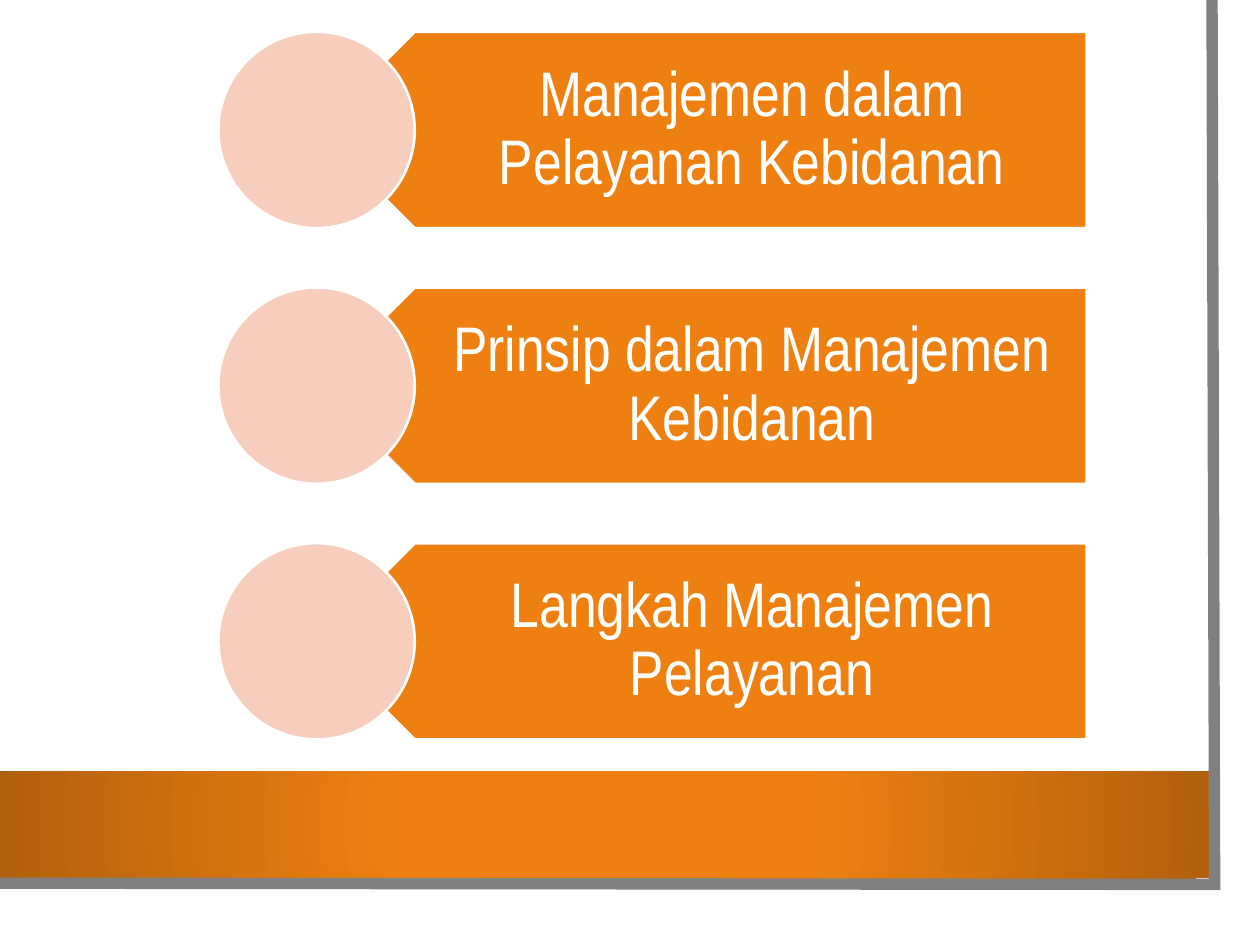
import pptx
import pptx.util
import pptx.dml.color
import pptx.enum.shapes
import pptx.enum.text
import pptx.oxml
import pptx.oxml.ns

Pt = pptx.util.Pt
RGBColor = pptx.dml.color.RGBColor
SHAPE = pptx.enum.shapes.MSO_SHAPE

WHITE = RGBColor(0xFF, 0xFF, 0xFF)
ORANGE = RGBColor(0xEE, 0x80, 0x11)
DARK_ORANGE = RGBColor(0xB2, 0x60, 0x0D)
PEACH = RGBColor(0xF7, 0xCD, 0xBD)
GREY = RGBColor(0x80, 0x80, 0x80)
NS = pptx.oxml.ns.nsdecls("a")

TOPICS = [
    "Manajemen dalam Pelayanan Kebidanan",
    "Prinsip dalam Manajemen Kebidanan",
    "Langkah Manajemen Pelayanan",
]
FIRST_TOP = 18.2
ROW_STEP = 146.1
ROW_HEIGHT = 112.2

presentation = pptx.Presentation()
presentation.slide_width = Pt(720)
presentation.slide_height = Pt(540)
slide = presentation.slides.add_slide(presentation.slide_layouts[6])


def add_block(kind, left, top, width, height, fill, line=None):
    block = slide.shapes.add_shape(kind, Pt(left), Pt(top), Pt(width), Pt(height))
    block.shadow.inherit = False
    block.fill.solid()
    block.fill.fore_color.rgb = fill
    if line is None:
        block.line.fill.background()
    else:
        block.line.color.rgb = line
        block.line.width = Pt(1.5)
    return block


def add_label(text, *, left, top, width, height, size, font, color):
    label = slide.shapes.add_textbox(Pt(left), Pt(top), Pt(width), Pt(height))
    frame = label.text_frame
    frame.word_wrap = True
    frame.vertical_anchor = pptx.enum.text.MSO_ANCHOR.MIDDLE
    frame.margin_left, frame.margin_right = Pt(49.5), Pt(20.2)
    frame.margin_top = frame.margin_bottom = Pt(10.8)
    paragraph = frame.paragraphs[0]
    paragraph.text = text
    paragraph.alignment = pptx.enum.text.PP_ALIGN.CENTER
    paragraph.line_spacing = 0.9
    paragraph.font.size = Pt(size)
    paragraph.font.name = font
    paragraph.font.color.rgb = color


add_block(SHAPE.RECTANGLE, 0, 0, 707.8, 523.4, WHITE)

footer_band = add_block(SHAPE.RECTANGLE, 0, 440.6, 691.2, 61.2, ORANGE)
footer_band.fill.gradient()
for stop, position, color in zip(
    footer_band.fill.gradient_stops, (0.34, 1), (ORANGE, DARK_ORANGE)
):
    stop.position = position
    stop.color.rgb = color
linear = footer_band.fill._xPr.find(".//" + pptx.oxml.ns.qn("a:lin"))
radial = pptx.oxml.parse_xml(
    f'<a:path {NS} path="circle">'
    '<a:fillToRect l="50000" t="50000" r="50000" b="50000"/></a:path>'
)
linear.getparent().replace(linear, radial)

edge_builder = slide.shapes.build_freeform(Pt(692.6), Pt(0))
edge_builder.add_line_segments(
    [(Pt(694.1), Pt(505.4)), (Pt(-1.4), Pt(504.7))], close=False
)
page_edge = edge_builder.convert_to_shape()
page_edge.shadow.inherit = False
page_edge.fill.background()
page_edge.line.color.rgb = GREY
page_edge.line.width = Pt(6.5)
page_edge.line._ln.append(pptx.oxml.parse_xml(f'<a:miter {NS} lim="800000"/>'))

for row, topic in enumerate(TOPICS):
    top = FIRST_TOP + row * ROW_STEP
    banner = add_block(SHAPE.PENTAGON, 180.9, top, 440, ROW_HEIGHT, ORANGE, WHITE)
    banner.rotation = 180
    add_label(topic, left=209, top=top, width=411.9, height=ROW_HEIGHT,
              size=36, font="Arial Narrow", color=WHITE)
    add_block(SHAPE.OVAL, 124.8, top, ROW_HEIGHT, ROW_HEIGHT, PEACH, WHITE)

presentation.save("out.pptx")
